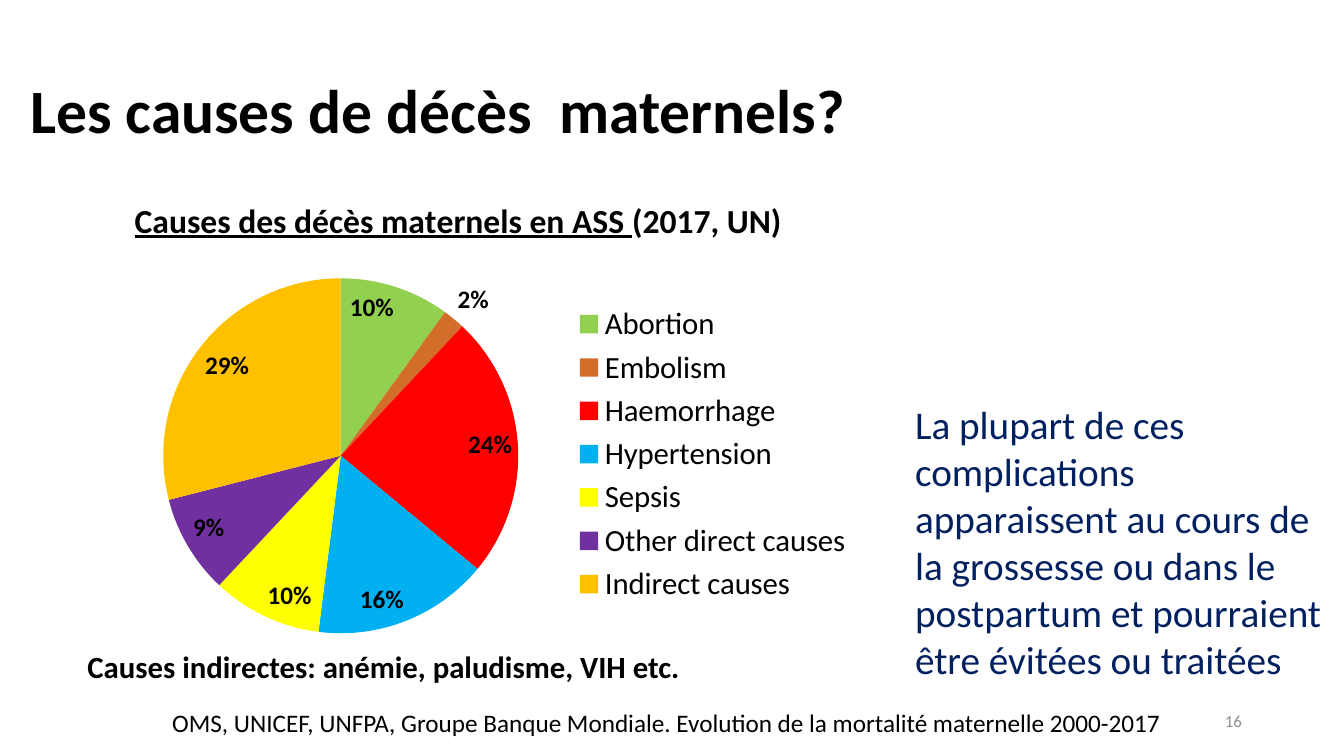
from lxml.etree import SubElement
from pptx import Presentation
from pptx.chart.data import CategoryChartData
from pptx.dml.color import RGBColor
from pptx.enum.chart import XL_CHART_TYPE, XL_LABEL_POSITION, XL_LEGEND_POSITION
from pptx.enum.text import MSO_ANCHOR, MSO_AUTO_SIZE, PP_ALIGN
from pptx.oxml.ns import qn
from pptx.util import Pt

BLACK = RGBColor(0x00, 0x00, 0x00)
NAVY = RGBColor(0x00, 0x20, 0x60)
GREY = RGBColor(0x8C, 0x8C, 0x8C)

CAUSES = [
    ("Abortion", 10, RGBColor(0x92, 0xD0, 0x50)),
    ("Embolism", 2, RGBColor(0xD2, 0x6E, 0x2A)),
    ("Haemorrhage", 24, RGBColor(0xFF, 0x00, 0x00)),
    ("Hypertension", 16, RGBColor(0x00, 0xB0, 0xF0)),
    ("Sepsis", 10, RGBColor(0xFF, 0xFF, 0x00)),
    ("Other direct causes", 9, RGBColor(0x70, 0x30, 0xA0)),
    ("Indirect causes", 29, RGBColor(0xFF, 0xC0, 0x00)),
]


class SlideBuilder:
    """Holds the style and the current slide, and adds each kind of element."""

    font_name = "Calibri"

    def __init__(self, deck):
        self.page = deck.slides.add_slide(deck.slide_layouts[5])

    def style(self, font, size, color=BLACK, bold=False):
        font.name = self.font_name
        font.size = Pt(size)
        font.bold = bold
        font.color.rgb = color

    def add_span(self, para, text, size, color=BLACK, bold=False, underline=False):
        span = para.add_run()
        span.text = text
        self.style(span.font, size, color, bold)
        if underline:
            span.font.underline = True

    def title(self, text, left, top, width, height, size):
        box = self.page.shapes.title
        box.left, box.top, box.width, box.height = map(Pt, (left, top, width, height))
        frame = box.text_frame
        frame.auto_size = MSO_AUTO_SIZE.NONE
        frame.vertical_anchor = MSO_ANCHOR.MIDDLE
        para = frame.paragraphs[0]
        para.alignment = PP_ALIGN.LEFT
        para.line_spacing = 0.9
        self.add_span(para, text, size, bold=True)

    def text(self, text, left, top, width, height, size, color=BLACK, bold=False,
             align=PP_ALIGN.LEFT, anchor=MSO_ANCHOR.TOP):
        box = self.page.shapes.add_textbox(*map(Pt, (left, top, width, height)))
        frame = box.text_frame
        frame.word_wrap = True
        frame.vertical_anchor = anchor
        para = frame.paragraphs[0]
        para.alignment = align
        self.add_span(para, text, size, color, bold)

    def place(self, part, index, inner=False, **fractions):
        for old in part.findall(qn("c:layout")):
            part.remove(old)
        layout = part.makeelement(qn("c:layout"))
        part.insert(index, layout)
        manual = SubElement(layout, qn("c:manualLayout"))
        if inner:
            SubElement(manual, qn("c:layoutTarget")).set("val", "inner")
        for name in ("xMode", "yMode"):
            SubElement(manual, qn(f"c:{name}")).set("val", "edge")
        for name, value in fractions.items():
            SubElement(manual, qn(f"c:{name}")).set("val", str(value))

    def pie(self, causes, heading, left, top, width, height):
        data = CategoryChartData()
        data.categories = [name for name, _, _ in causes]
        data.add_series("Series 1", [value for _, value, _ in causes])
        frame = self.page.shapes.add_chart(
            XL_CHART_TYPE.PIE, *map(Pt, (left, top, width, height)), data)
        chart = frame.chart
        self.style(chart.font, 18)

        chart.has_title = True
        para = chart.chart_title.text_frame.paragraphs[0]
        for text, underline in heading:
            self.add_span(para, text, 24, bold=True, underline=underline)

        chart.has_legend = True
        chart.legend.position = XL_LEGEND_POSITION.RIGHT
        chart.legend.include_in_layout = False
        self.style(chart.legend.font, 22)

        plot = chart.plots[0]
        plot.vary_by_categories = True
        series = plot.series[0]
        labels = series.data_labels
        labels.show_value = False
        labels.show_percentage = True
        labels.number_format = "0%"
        labels.number_format_is_linked = False
        labels.position = XL_LABEL_POSITION.INSIDE_END
        self.style(labels.font, 18, bold=True)
        for index, (_, value, color) in enumerate(causes):
            point = series.points[index]
            point.format.fill.solid()
            point.format.fill.fore_color.rgb = color
            if value < 5:
                self.style(point.data_label.font, 18, bold=True)
                point.data_label.position = XL_LABEL_POSITION.OUTSIDE_END
        for label in chart.element.xpath(".//c:dLbl"):
            label.find(qn("c:showVal")).set("val", "0")
            label.find(qn("c:showPercent")).set("val", "1")

        title, = chart.element.xpath(".//c:chart/c:title")
        legend, = chart.element.xpath(".//c:legend")
        area, = chart.element.xpath(".//c:plotArea")
        self.place(title, 1, x=0.12, y=0.02)
        self.place(legend, 1, x=0.59, y=0.22, w=0.31, h=0.6)
        self.place(area, 0, inner=True, x=0.154, y=0.086, w=0.382, h=0.874)


def main():
    deck = Presentation()
    deck.slide_width, deck.slide_height = Pt(960), Pt(540)
    slide = SlideBuilder(deck)
    slide.title("Les causes de décès  maternels?", 14.4, 28.8, 898.6, 104.4, 44)
    slide.pie(
        CAUSES,
        [("Causes des décès maternels en ASS ", True), ("(2017, UN)", False)],
        14.4, 133.2, 663.8, 367.9)
    slide.text("16", 678.2, 500.4, 216, 28.8, 12, GREY,
               align=PP_ALIGN.RIGHT, anchor=MSO_ANCHOR.MIDDLE)
    slide.text(
        "La plupart de ces complications apparaissent au cours de la grossesse "
        "ou dans le postpartum et pourraient être évitées ou traitées",
        646.6, 282.2, 313.4, 211, 28, NAVY)
    slide.text("Causes indirectes: anémie, paludisme, VIH etc.",
               55.4, 459.4, 524.2, 33.8, 22, bold=True)
    slide.text(
        "OMS, UNICEF, UNFPA, Groupe Banque Mondiale. "
        "Evolution de la mortalité maternelle 2000-2017",
        115.9, 501.8, 748.1, 28.8, 18)
    deck.save("out.pptx")


if __name__ == "__main__":
    main()
